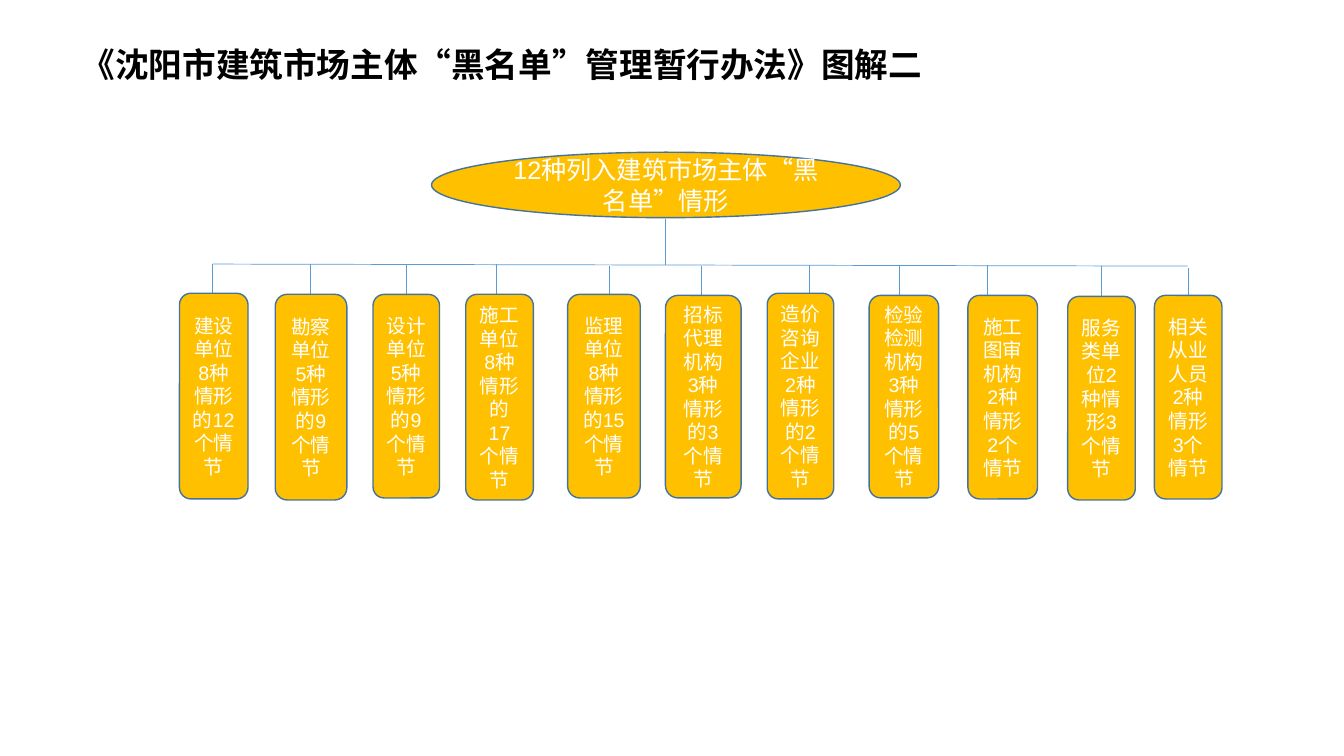
"""Build a slide that charts the blacklist cases by type of market party."""
from pptx import Presentation
from pptx import util as u
from pptx.dml import color
from pptx.enum import shapes, text
from pptx.oxml import ns, xmlchemy

HUES = {"gold": "FFC000", "edge": "43739E", "link": "5B9BD5",
        "white": "FFFFFF", "black": "000000"}

PARTIES = [
    ("建设单位8种情形的12个情节", 1.78, 2.91, 0.68, 2.04, 2.11, 2.62),
    ("勘察单位5种情形的9个情节", 2.73, 2.92, 0.71, 2.04, 3.08, 2.62),
    ("设计单位5种情形的9个情节", 3.7, 2.92, 0.66, 2.02, 4.03, 2.62),
    ("施工单位8种情形的17个情节", 4.62, 2.92, 0.67, 2.04, 4.92, 2.62),
    ("监理单位8种情形的15个情节", 5.63, 2.92, 0.72, 2.02, 6.04, 2.64),
    ("招标代理机构3种情形的3个情节", 6.6, 2.93, 0.75, 2.01, 6.96, 2.64),
    ("造价咨询企业2种情形的2个情节", 7.61, 2.91, 0.66, 2.04, 8.03, 2.63),
    ("检验检测机构3种情形的5个情节", 8.62, 2.93, 0.69, 2.01, 8.92, 2.63),
    ("施工图审机构2种情形2个情节", 9.6, 2.93, 0.69, 2.02, 9.79, 2.63),
    ("服务类单位2种情形3个情节", 10.59, 2.94, 0.67, 2.02, 10.92, 2.64),
    ("相关从业人员2种情形3个情节", 11.45, 2.93, 0.67, 2.02, 11.79, 2.66),
]


def tint(name):
    return color.RGBColor.from_string(HUES[name])


def write(shape, words, size, face, hue, align, bold=False):
    frame = shape.text_frame
    frame.word_wrap = True
    frame.auto_size = text.MSO_AUTO_SIZE.NONE
    frame.vertical_anchor = text.MSO_ANCHOR.MIDDLE
    para = frame.paragraphs[0]
    para.alignment = align
    run = para.add_run()
    run.text = words
    run.font.size = u.Pt(size)
    run.font.name = face
    run.font.bold = bold
    run.font.color.rgb = tint(hue)
    return para


def head(slide, words):
    title = slide.shapes.title
    title.left, title.top = u.Inches(0.71), u.Inches(0.28)
    title.width, title.height = u.Inches(11.5), u.Inches(0.76)
    para = write(title, words, 24, "Montserrat", "black", text.PP_ALIGN.LEFT, True)
    para.line_spacing = 0.9


def node(slide, kind, words, size, *area):
    shape = slide.shapes.add_shape(kind, *map(u.Inches, area))
    shape.shadow.inherit = False
    shape.fill.solid()
    shape.fill.fore_color.rgb = tint("gold")
    shape.line.color.rgb = tint("edge")
    shape.line.width = u.Pt(1)
    write(shape, words, size, "Arial", "white", text.PP_ALIGN.CENTER)


def link(slide, *ends):
    line = slide.shapes.add_connector(shapes.MSO_CONNECTOR.STRAIGHT, *map(u.Inches, ends))
    line.line.color.rgb = tint("link")
    line.line.width = u.Pt(0.5)
    line._element.spPr.append(xmlchemy.OxmlElement("a:effectLst", nsmap=ns.nsmap and None))


def main():
    deck = Presentation()
    deck.slide_width, deck.slide_height = u.Inches(13.33), u.Inches(7.5)
    slide = deck.slides.add_slide(deck.slide_layouts[5])
    head(slide, "《沈阳市建筑市场主体“黑名单”管理暂行办法》图解二")
    node(slide, shapes.MSO_SHAPE.OVAL, "12种列入建筑市场主体“黑名单”情形", 18,
         4.28, 1.51, 4.65, 0.65)
    link(slide, 6.6, 2.17, 6.6, 2.63)
    link(slide, 2.11, 2.62, 11.78, 2.64)
    for words, left, top, width, height, stem, bar in PARTIES:
        link(slide, stem, bar, stem, top)
        node(slide, shapes.MSO_SHAPE.ROUNDED_RECTANGLE, words, 14,
             left, top, width, height)
    deck.save("out.pptx")


if __name__ == "__main__":
    main()
